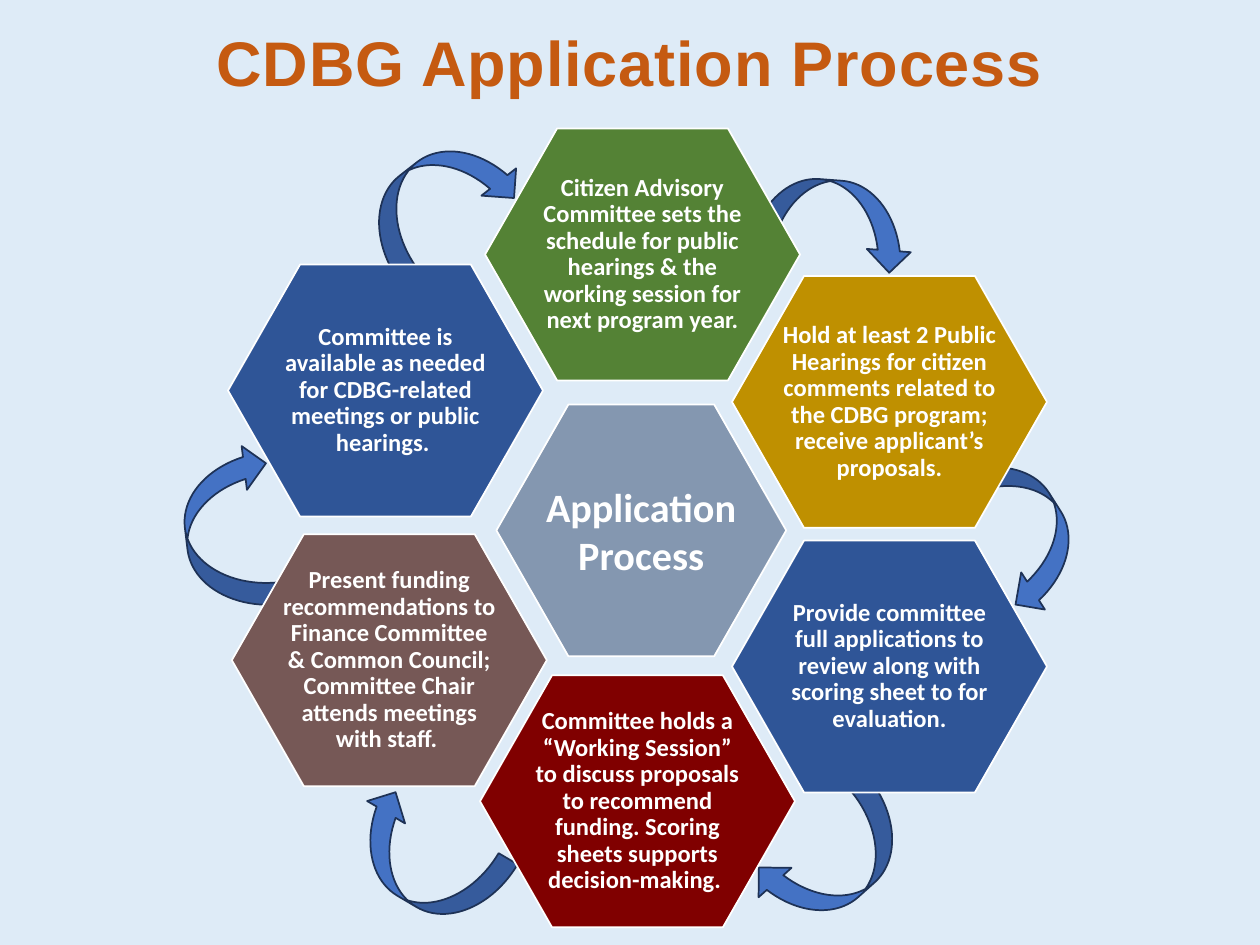
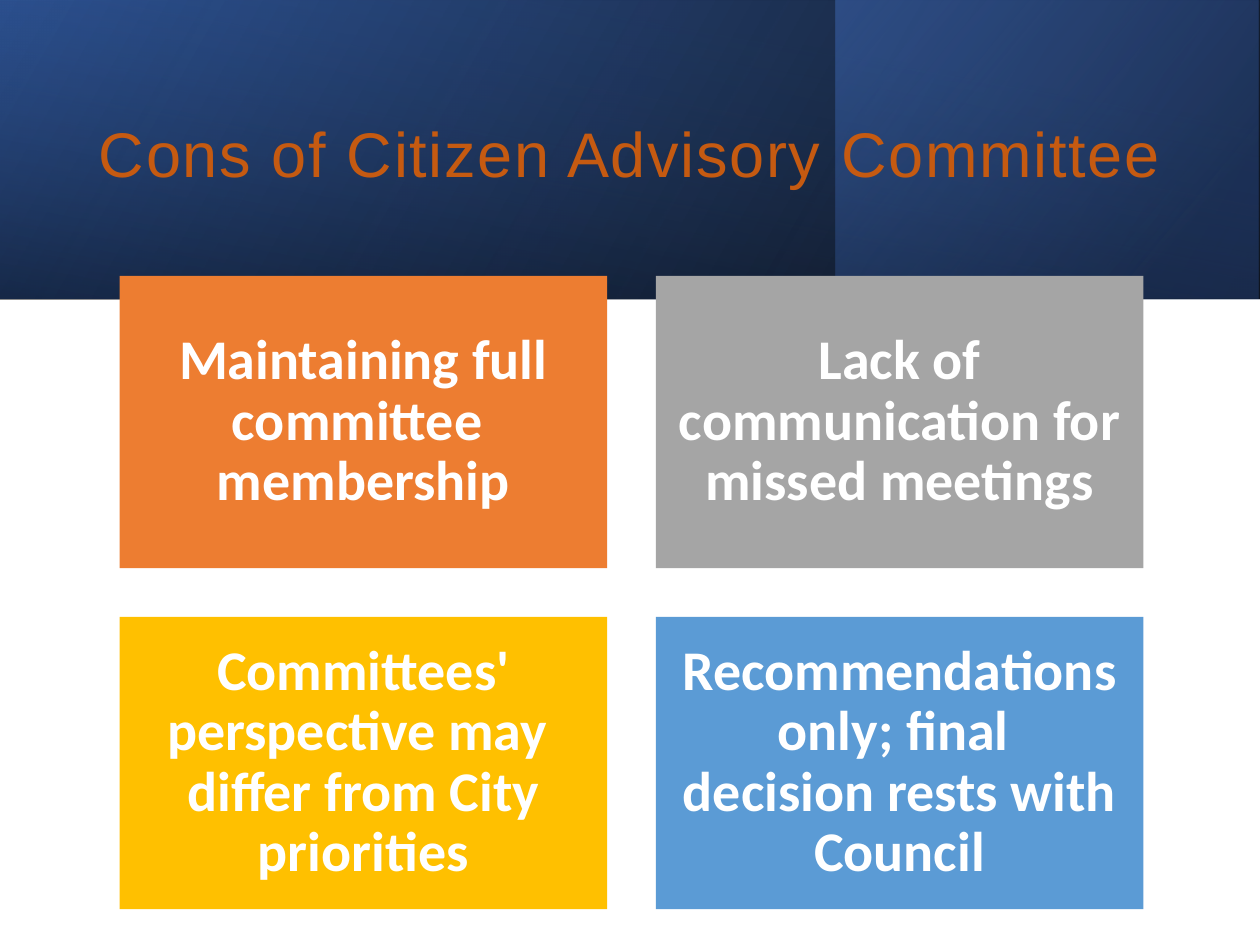
import lxml.etree
import pptx
import pptx.dml.color
import pptx.enum.shapes
import pptx.enum.text
import pptx.oxml.ns
import pptx.util

SHAPE = pptx.enum.shapes.MSO_SHAPE
MIDDLE = pptx.enum.text.MSO_ANCHOR.MIDDLE
CENTER = pptx.enum.text.PP_ALIGN.CENTER
AUTO_SIZE = pptx.enum.text.MSO_AUTO_SIZE

SLIDE_WIDTH, SLIDE_HEIGHT = pptx.util.Inches(10), pptx.util.Inches(7.5)
COLUMNS, ROWS = 100, 75
WHITE, PALE_BLUE, NAVY, BLUE, RUST = "FFFFFF", "DEEBF7", "2F5597", "4472C4", "C55A11"
ARROW_OUTLINE = "1E3256"
TITLE_FONT = {"name": "Arial", "size": pptx.util.Pt(36)}
BODY_FONT = {"name": "Calibri", "bold": True}
NO_MARGINS = {"margin_left": 0, "margin_top": 0, "margin_right": 0, "margin_bottom": 0}

# Offsets from the centre of the cycle, in columns and rows
STEPS = [
    (0.1, -21.9, "548235", "Citizen Advisory Committee sets the schedule for public "
     "hearings & the working session for next program year."),
    (19.7, -10.2, "BF9000", "Hold at least 2 Public Hearings for citizen comments "
     "related to the CDBG program; receive applicant’s proposals."),
    (19.7, 10.8, NAVY, "Provide committee full applications to review along with "
     "scoring sheet to for evaluation."),
    (-0.3, 21.5, "800000", "Committee holds a “Working Session” to discuss proposals to "
     "recommend funding. Scoring sheets supports decision-making. "),
    (-20, 10.3, "765856", "Present funding recommendations to Finance Committee & Common "
     "Council; Committee Chair attends meetings with staff. "),
    (-20.3, -11.1, NAVY, "Committee is available as needed for CDBG-related meetings or "
     "public hearings. "),
]
LEFT_ARROW = (SHAPE.CURVED_LEFT_ARROW, 7, 13)
DOWN_ARROW = (SHAPE.CURVED_DOWN_ARROW, 13, 7)
CYCLE_ARROWS = [
    (-32.7, -0.2, 173.1, LEFT_ARROW),
    (-17.2, 26.2, 210.6, DOWN_ARROW),
    (15.2, 26.2, 138.3, DOWN_ARROW),
    (30.1, 0, 57.5, DOWN_ARROW),
    (15.2, -24.3, 4.3, DOWN_ARROW),
    (-16, -26.2, 231.8, LEFT_ARROW),
]
# Box, rotation, gradient angle, stops as (position, colour, opacity)
BANNER_LAYERS = [
    ((0, 0, 100, 23.7), 0, 330, [(0, "000000", 96), (100, NAVY, 100)]),
    ((66.3, 0, 33.6, 23.7), 0, 320, [(19, "203864", 68), (100, BLUE, 48)]),
    ((38.1, -38.1, 23.7, 100), 270, 350, [(23, NAVY, 16), (99, "000000", 45)]),
]
CONS = [
    ("ED7D31", ["Maintaining full committee ", "membership"]),
    ("A5A5A5", ["Lack of communication for missed meetings"]),
    ("FFC000", ["Committees' perspective may ", "differ from City priorities"]),
    ("5B9BD5", ["Recommendations only; final ", "decision rests with Council"]),
]


def color(hex_string):
    return pptx.dml.color.RGBColor.from_string(hex_string)


def assign(target, values):
    for name, value in values.items():
        setattr(target, name, value)


def position(box):
    """Turn a box in columns and rows into named lengths."""
    left, top, width, height = box
    return {"left": round(left * SLIDE_WIDTH / COLUMNS),
            "top": round(top * SLIDE_HEIGHT / ROWS),
            "width": round(width * SLIDE_WIDTH / COLUMNS),
            "height": round(height * SLIDE_HEIGHT / ROWS)}


def around(x, y, width, height):
    return x - width / 2, y - height / 2, width, height


def add_figure(slide, kind, box, fill=None, outline=None):
    figure = slide.shapes.add_shape(kind, **position(box))
    figure.shadow.inherit = False
    if fill:
        figure.fill.solid()
        figure.fill.fore_color.rgb = color(fill)
    if outline:
        figure.line.color.rgb = color(outline)
        figure.line.width = pptx.util.Pt(1)
    else:
        figure.line.fill.background()
    return figure


def write(figure, paragraphs, size, line_spacing=0.9):
    frame = figure.text_frame
    assign(frame, {"word_wrap": True, "vertical_anchor": MIDDLE, **NO_MARGINS})
    for index, words in enumerate(paragraphs):
        paragraph = frame.add_paragraph() if index else frame.paragraphs[0]
        assign(paragraph, {"alignment": CENTER, "line_spacing": line_spacing})
        run = paragraph.add_run()
        run.text = words
        assign(run.font, {**BODY_FONT, "size": pptx.util.Pt(size)})
        run.font.color.rgb = color(WHITE)


def add_slide(deck, background):
    slide = deck.slides.add_slide(deck.slide_layouts[5])
    slide.background.fill.solid()
    slide.background.fill.fore_color.rgb = color(background)
    return slide


def set_title(slide, words, box, tracking, bold, line_spacing=1.0, frame_format=None):
    """Format the title and bring it in front of what is already placed."""
    title = slide.shapes.title
    assign(title, position(box))
    assign(title.text_frame, {"word_wrap": True, "vertical_anchor": MIDDLE,
                              "auto_size": AUTO_SIZE.NONE, **(frame_format or {})})
    paragraph = title.text_frame.paragraphs[0]
    assign(paragraph, {"alignment": CENTER, "line_spacing": line_spacing})
    run = paragraph.add_run()
    run.text = words
    assign(run.font, {**TITLE_FONT, "bold": bold})
    run.font.color.rgb = color(RUST)
    run.font._element.set("spc", str(tracking))
    slide.shapes.element.append(title.element)


def add_hexagon(slide, box, fill):
    hexagon = add_figure(slide, SHAPE.HEXAGON, box, fill, WHITE)
    hexagon.adjustments[0] = 0.286
    hexagon.adjustments[1] = 1.1547
    return hexagon


def add_cycle_arrows(slide, box):
    left, top, width, height = box
    for dx, dy, rotation, (kind, arrow_width, arrow_height) in CYCLE_ARROWS:
        place = around(left + width / 2 + dx, top + height / 2 + dy,
                       arrow_width, arrow_height)
        add_figure(slide, kind, place, BLUE, ARROW_OUTLINE).rotation = rotation


def add_cycle_steps(slide, box):
    left, top, width, height = box
    x, y = left + width / 2, top + height / 2
    hub = add_hexagon(slide, around(x, y, 23, 20), "8497B0")
    write(hub, ["Application Process"], 23, 1.0)
    for dx, dy, fill, words in STEPS:
        write(add_hexagon(slide, around(x + dx, y + dy, 25, 20), fill), [words], 14)


def set_gradient(figure, angle, stops):
    """Give a linear gradient whose stops have their own opacity."""
    figure.fill.gradient()
    properties = figure.element.spPr
    qn = pptx.oxml.ns.qn
    gradient = properties.find(qn("a:gradFill"))
    for child in list(gradient):
        gradient.remove(child)
    stop_list = lxml.etree.SubElement(gradient, qn("a:gsLst"))
    for place, hex_string, opacity in stops:
        stop = lxml.etree.SubElement(stop_list, qn("a:gs"), pos=str(place * 1000))
        tint = lxml.etree.SubElement(stop, qn("a:srgbClr"), val=hex_string)
        lxml.etree.SubElement(tint, qn("a:alpha"), val=str(opacity * 1000))
    lxml.etree.SubElement(gradient, qn("a:lin"), ang=str(angle * 60000), scaled="0")
    properties.find(qn("a:xfrm")).set("flipH", "1")


def add_banner(slide, box):
    left, top = box
    for (dx, dy, width, height), rotation, angle, stops in BANNER_LAYERS:
        layer = add_figure(slide, SHAPE.RECTANGLE, (left + dx, top + dy, width, height))
        layer.rotation = rotation
        set_gradient(layer, angle, stops)


def add_cons_cards(slide, box, gap=3.85, columns=2):
    left, top, width, height = box
    rows = len(CONS) // columns
    card_width = (width - gap * (columns - 1)) / columns
    card_height = (height - gap * (rows - 1)) / rows
    for index, (fill, paragraphs) in enumerate(CONS):
        row, column = divmod(index, columns)
        place = (left + column * (card_width + gap), top + row * (card_height + gap),
                 card_width, card_height)
        write(add_figure(slide, SHAPE.RECTANGLE, place, fill), paragraphs, 32)


def build_process_slide(deck):
    slide = add_slide(deck, PALE_BLUE)
    cycle = (10.9, 10.1, 80, 64)
    add_cycle_arrows(slide, cycle)
    set_title(slide, "CDBG Application Process", (0, 1.2, 100, 7.3), 50, True)
    add_cycle_steps(slide, cycle)


def build_cons_slide(deck):
    slide = add_slide(deck, WHITE)
    add_banner(slide, (0, 0))
    set_title(slide, "Cons of Citizen Advisory Committee", (0.1, 9.7, 99.8, 5.5), 100,
              False, 0.9, {**NO_MARGINS, "auto_size": AUTO_SIZE.SHAPE_TO_FIT_TEXT})
    add_cons_cards(slide, (9.5, 21.9, 81.25, 50.25))


def main():
    deck = pptx.Presentation()
    assign(deck, {"slide_width": SLIDE_WIDTH, "slide_height": SLIDE_HEIGHT})
    build_process_slide(deck)
    build_cons_slide(deck)
    deck.save("out.pptx")


if __name__ == "__main__":
    main()
